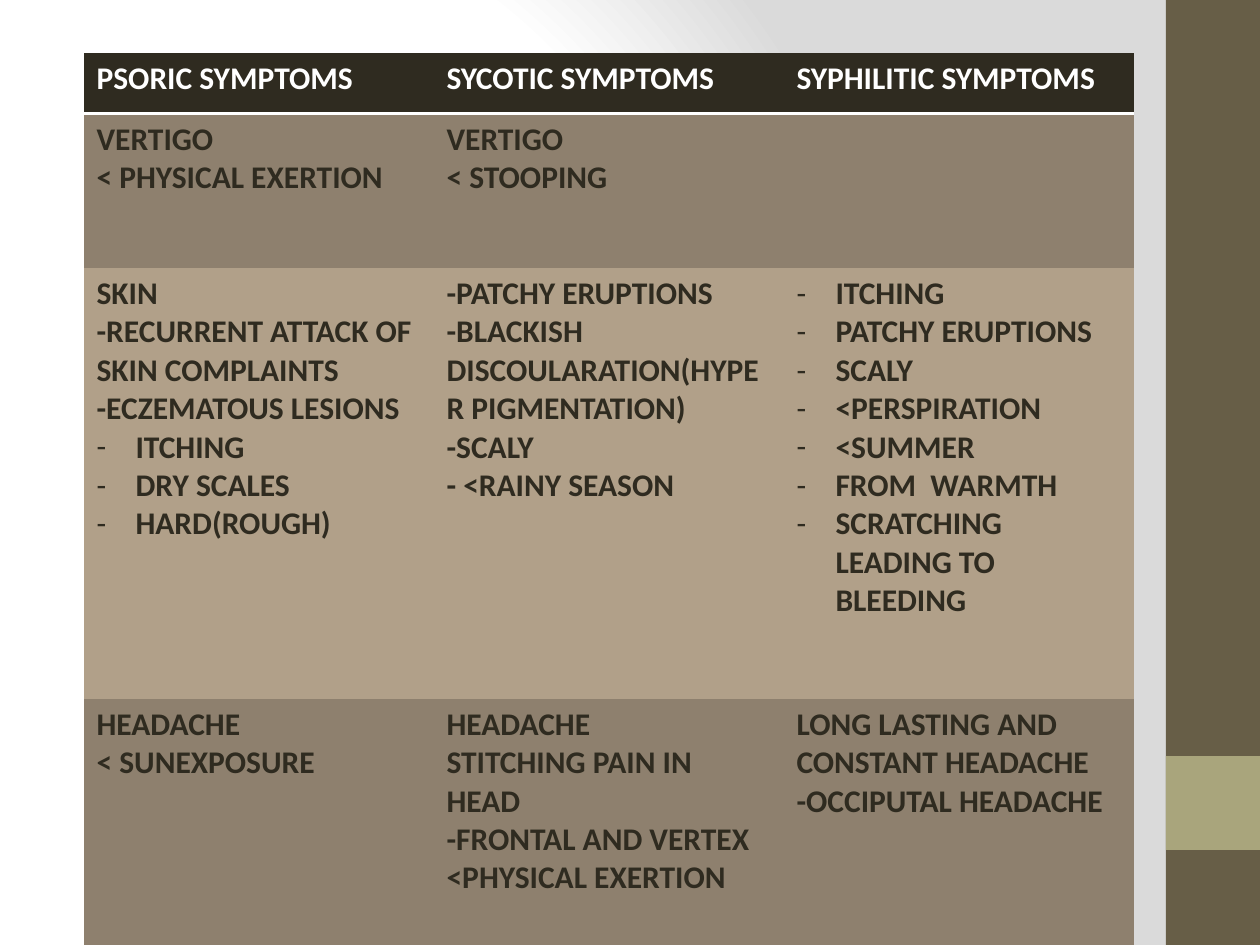
from lxml.etree import SubElement
from pptx import Presentation
from pptx.dml.color import RGBColor
from pptx.enum.shapes import MSO_SHAPE as Shape
from pptx.oxml import parse_xml
from pptx.oxml.ns import nsdecls, qn
from pptx.util import Emu, Pt

WHITE = RGBColor(0xFF, 0xFF, 0xFF)
SILVER = RGBColor(0xDA, 0xDA, 0xDA)
INK = RGBColor(0x2F, 0x2B, 0x20)
TAUPE = RGBColor(0x8E, 0x80, 0x6E)
SAND = RGBColor(0xB1, 0xA0, 0x89)
OLIVE = RGBColor(0x67, 0x5E, 0x47)
SAGE = RGBColor(0xA9, 0xA5, 0x7C)

PX_PER_INCH = 126
FONT = "Calibri"
BULLET = "• "
NO_STYLE = "{2D5ABB26-0587-4C30-8999-92F81FD0307C}"

HEADINGS = ["PSORIC SYMPTOMS", "SYCOTIC SYMPTOMS", "SYPHILITIC SYMPTOMS"]
VERTIGO = [
    ["VERTIGO", "< PHYSICAL EXERTION"],
    ["VERTIGO", "< STOOPING"],
    [],
]
SKIN = [
    ["SKIN", "-RECURRENT ATTACK OF SKIN COMPLAINTS", "-ECZEMATOUS LESIONS",
     "• ITCHING", "• DRY SCALES", "• HARD(ROUGH)"],
    ["-PATCHY ERUPTIONS", "-BLACKISH DISCOULARATION(HYPER PIGMENTATION)",
     "-SCALY", "- <RAINY SEASON"],
    ["• ITCHING", "• PATCHY ERUPTIONS", "• SCALY", "• <PERSPIRATION",
     "• <SUMMER", "• FROM  WARMTH", "• SCRATCHING LEADING TO BLEEDING"],
]
HEADACHE = [
    ["HEADACHE", "< SUNEXPOSURE"],
    ["HEADACHE", "STITCHING PAIN IN HEAD", "-FRONTAL AND VERTEX",
     "<PHYSICAL EXERTION"],
    ["LONG LASTING AND CONSTANT HEADACHE", "-OCCIPUTAL HEADACHE"],
]
ROWS = [
    (61, INK, WHITE, [[heading] for heading in HEADINGS]),
    (154, TAUPE, INK, VERTIGO),
    (431, SAND, INK, SKIN),
    (246, TAUPE, INK, HEADACHE),
]


def px(length):
    return Emu(round(length * 914400 / PX_PER_INCH))


def paint_background(slide):
    stops = "".join(
        f'<a:gs pos="{percent * 1000}"><a:srgbClr val="{color}"/></a:gs>'
        for percent, color in [(0, WHITE), (75, WHITE), (100, SILVER)])
    slide.element.cSld.insert(0, parse_xml(
        f'<p:bg {nsdecls("p", "a")}><p:bgPr><a:gradFill rotWithShape="1">'
        f'<a:gsLst>{stops}</a:gsLst><a:path path="circle">'
        '<a:fillToRect l="20000" t="50000" r="100000" b="50000"/></a:path>'
        '</a:gradFill><a:effectLst/></p:bgPr></p:bg>'))


def add_sidebar(slide, left, top, width, height):
    accent_top = top + height * 4 // 5
    for band_top, band_height, color in [(top, height, OLIVE),
                                         (accent_top, width, SAGE)]:
        band = slide.shapes.add_shape(
            Shape.RECTANGLE, px(left), px(band_top), px(width), px(band_height))
        band.shadow.inherit = False
        band.fill.solid()
        band.fill.fore_color.rgb = color
        band.line.fill.background()


def hang_dash(paragraph):
    properties = paragraph._p.get_or_add_pPr()
    properties.set("marL", str(px(39)))
    properties.set("indent", str(-px(39)))
    SubElement(properties, qn("a:buFont"), typeface=FONT)
    SubElement(properties, qn("a:buChar"), char="-")


def write_symptoms(cell, symptoms, color):
    frame = cell.text_frame
    frame.text = "\n".join(text.removeprefix(BULLET) for text in symptoms)
    for paragraph, text in zip(frame.paragraphs, symptoms):
        font = paragraph.font
        font.name, font.size, font.bold = FONT, Pt(18), True
        font.color.rgb = color
        if text.startswith(BULLET):
            hang_dash(paragraph)


def underline_cell(cell):
    cell._tc.get_or_add_tcPr().insert(0, parse_xml(
        f'<a:lnB {nsdecls("a")} w="{Pt(2)}"><a:solidFill>'
        f'<a:srgbClr val="{WHITE}"/></a:solidFill></a:lnB>'))


def add_symptom_table(slide, left, top, width, height):
    table = slide.shapes.add_table(
        len(ROWS), len(HEADINGS), px(left), px(top), px(width), px(height)).table
    table._tbl.tblPr.find(qn("a:tableStyleId")).text = NO_STYLE
    table.horz_banding = False
    for column in table.columns:
        column.width = px(width // len(HEADINGS))
    for row, (row_height, fill, ink, contents) in zip(table.rows, ROWS):
        row.height = px(row_height)
        for cell, symptoms in zip(row.cells, contents):
            cell.fill.solid()
            cell.fill.fore_color.rgb = fill
            write_symptoms(cell, symptoms, ink)
    for cell in table.rows[0].cells:
        underline_cell(cell)


def main():
    deck = Presentation()
    deck.slide_width, deck.slide_height = px(1260), px(945)
    slide = deck.slides.add_slide(deck.slide_layouts[6])
    paint_background(slide)
    add_sidebar(slide, 1166, 0, 94, 945)
    add_symptom_table(slide, 84, 53, 1050, 892)
    deck.save("out.pptx")


if __name__ == "__main__":
    main()
